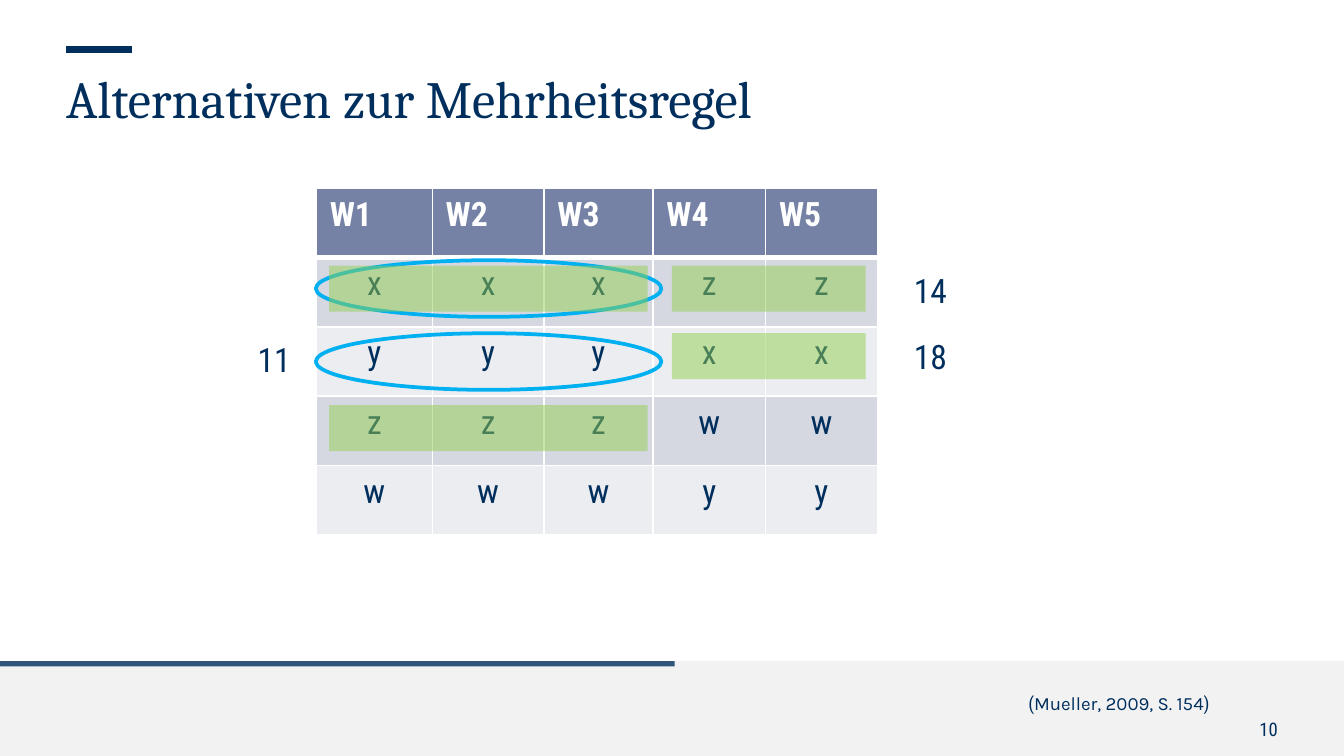
from lxml.etree import SubElement
from pptx import Presentation
from pptx.dml.color import RGBColor
from pptx.enum.shapes import MSO_CONNECTOR, MSO_SHAPE
from pptx.enum.text import MSO_ANCHOR, MSO_AUTO_SIZE, PP_ALIGN
from pptx.oxml.ns import qn
from pptx.util import Cm, Pt

NAVY, WHITE, GREEN, BLUE = "002F5D", "FFFFFF", "92D050", "00B0F0"
HEADER_FILL, ROW_FILLS = "7682A5", ("D6D8E1", "ECEDF0")


def color(value):
    return RGBColor.from_string(value)


class Slide:
    """Holds the style and the current slide; lengths are in centimetres."""

    sans, serif, accent = "Roboto Condensed", "Cambria", "Karla"

    def __init__(self, page):
        self.page = page
        self.shapes = page.shapes

    def style(self, para, size, font=None, ink=NAVY, bold=False, align=PP_ALIGN.LEFT):
        para.alignment = align
        para.font.size = Pt(size)
        para.font.bold = bold
        para.font.color.rgb = color(ink)
        if font:
            para.font.name = font

    def frame(self, box):
        """Give a box zero insets, wrapping and top-anchored text."""
        frame = box.text_frame
        frame.margin_left = frame.margin_right = frame.margin_top = frame.margin_bottom = 0
        frame.word_wrap = True
        frame.auto_size = MSO_AUTO_SIZE.NONE
        frame.vertical_anchor = MSO_ANCHOR.TOP
        return frame

    def placeholder(self, index, area, spans, size, align=PP_ALIGN.LEFT):
        box = self.page.placeholders[index]
        box.left, box.top, box.width, box.height = map(Cm, area)
        self.shapes._spTree.append(box._element)  # bring in front of the footer
        para = self.frame(box).paragraphs[0]
        properties = para._p.get_or_add_pPr()
        properties.set("marL", "0")
        properties.set("indent", "0")
        SubElement(properties, qn("a:buNone"))
        para.space_before = Pt(0)
        self.style(para, size, align=align)
        for text, font in spans:
            span = para.add_run()
            span.text, span.font.name = text, font

    def page_number(self, area, text):
        box = self.shapes.add_textbox(*map(Cm, area))
        para = self.frame(box).paragraphs[0]
        para.text = text
        self.style(para, 10, self.sans, align=PP_ALIGN.RIGHT)

    def label(self, left, top, text):
        box = self.shapes.add_textbox(Cm(left), Cm(top), Cm(1.15), Cm(1.03))
        box.text_frame.word_wrap = False
        box.text_frame.auto_size = MSO_AUTO_SIZE.SHAPE_TO_FIT_TEXT
        para = box.text_frame.paragraphs[0]
        para.text = text
        self.style(para, 18, self.sans)

    def block(self, area, fill, opacity=100):
        shape = self.shapes.add_shape(MSO_SHAPE.RECTANGLE, *map(Cm, area))
        shape.shadow.inherit = False
        shape.line.fill.background()
        shape.fill.solid()
        shape.fill.fore_color.rgb = color(fill)
        if opacity < 100:
            tint = shape.fill._xPr.find(".//" + qn("a:srgbClr"))
            SubElement(tint, qn("a:alpha"), val=str(opacity * 1000))

    def ring(self, area):
        shape = self.shapes.add_shape(MSO_SHAPE.OVAL, *map(Cm, area))
        shape.shadow.inherit = False
        shape.fill.background()
        shape.line.color.rgb = color(BLUE)
        shape.line.width = Pt(2)

    def rule(self, left, right, top):
        line = self.shapes.add_connector(
            MSO_CONNECTOR.STRAIGHT, Cm(left), Cm(top), Cm(right), Cm(top))
        line.line.color.rgb = color(NAVY)
        line.line.width = Pt(3.5)
        SubElement(line._element.spPr, qn("a:effectLst"))

    def border(self, cell, side, points):
        line = SubElement(cell._tc.get_or_add_tcPr(), qn("a:ln" + side),
                          w=str(Pt(points)))
        fill = SubElement(line, qn("a:solidFill"))
        SubElement(fill, qn("a:srgbClr"), val=WHITE)

    def table(self, left, top, widths, row_height, rows):
        table = self.shapes.add_table(
            len(rows), len(widths), Cm(left), Cm(top),
            Cm(sum(widths)), Cm(row_height * len(rows))).table
        for column, width in zip(table.columns, widths):
            column.width = Cm(width)
        for row_index, values in enumerate(rows):
            header = row_index == 0
            table.rows[row_index].height = Cm(row_height)
            for column_index, value in enumerate(values):
                cell = table.cell(row_index, column_index)
                # Thick rule between the header and the first row
                thick = {0: "B", 1: "T"}.get(row_index)
                for side in "LRTB":
                    self.border(cell, side, 3 if side == thick else 1)
                cell.fill.solid()
                cell.fill.fore_color.rgb = color(
                    HEADER_FILL if header else ROW_FILLS[(row_index - 1) % 2])
                para = cell.text_frame.paragraphs[0]
                para.text = value
                self.style(para, 18, self.sans, WHITE if header else NAVY, header,
                           PP_ALIGN.LEFT if header else PP_ALIGN.CENTER)


def main():
    deck = Presentation()
    deck.slide_width, deck.slide_height = Cm(25.4), Cm(14.29)
    slide = Slide(deck.slides.add_slide(deck.slide_layouts[1]))

    # Footer and title rule
    slide.block((0, 12.5, 25.4, 1.79), "F2F2F2")
    slide.page_number((22.89, 13.56, 1.26, 0.43), "10")
    slide.block((0, 12.5, 12.75, 0.1), NAVY, 80)
    slide.rule(1.25, 2.49, 0.94)

    # Source and title
    slide.placeholder(1, (8.33, 13.08, 14.53, 0.46), [
        ("(", slide.sans),
        ("Mueller, 2009, S. 154", slide.accent),
        (")", slide.sans),
    ], 10, PP_ALIGN.RIGHT)
    slide.placeholder(0, (1.25, 1.25, 24.6, 2.29),
                      [("Alternativen zur Mehrheitsregel", slide.serif)], 28)

    # Preference rankings of the five voters
    ranks = ["xxxzz", "yyyxx", "zzzww", "wwwyy"]
    slide.table(5.98, 3.56, [2.19, 2.11, 2.06, 2.13, 2.11], 1.31,
                [[f"W{number}" for number in range(1, 6)], *ranks])

    # Rings around the majority's first two choices
    for top in (4.92, 6.3):
        slide.ring((5.97, top, 6.53, 1.07))

    # Green marks: left group is W1 to W3, right group is W4 and W5
    left_group, right_group = (6.22, 6.02), (12.7, 3.66)
    for (left, width), top in [(left_group, 5.02), (right_group, 6.3),
                               (right_group, 5.02), (left_group, 7.66)]:
        slide.block((left, top, width, 0.87), GREEN, 50)

    # Points
    for left, top, points in [(17.02, 6.22, "18"), (17.02, 4.98, "14"),
                              (4.62, 6.28, "11")]:
        slide.label(left, top, points)

    deck.save("out.pptx")


if __name__ == "__main__":
    main()
